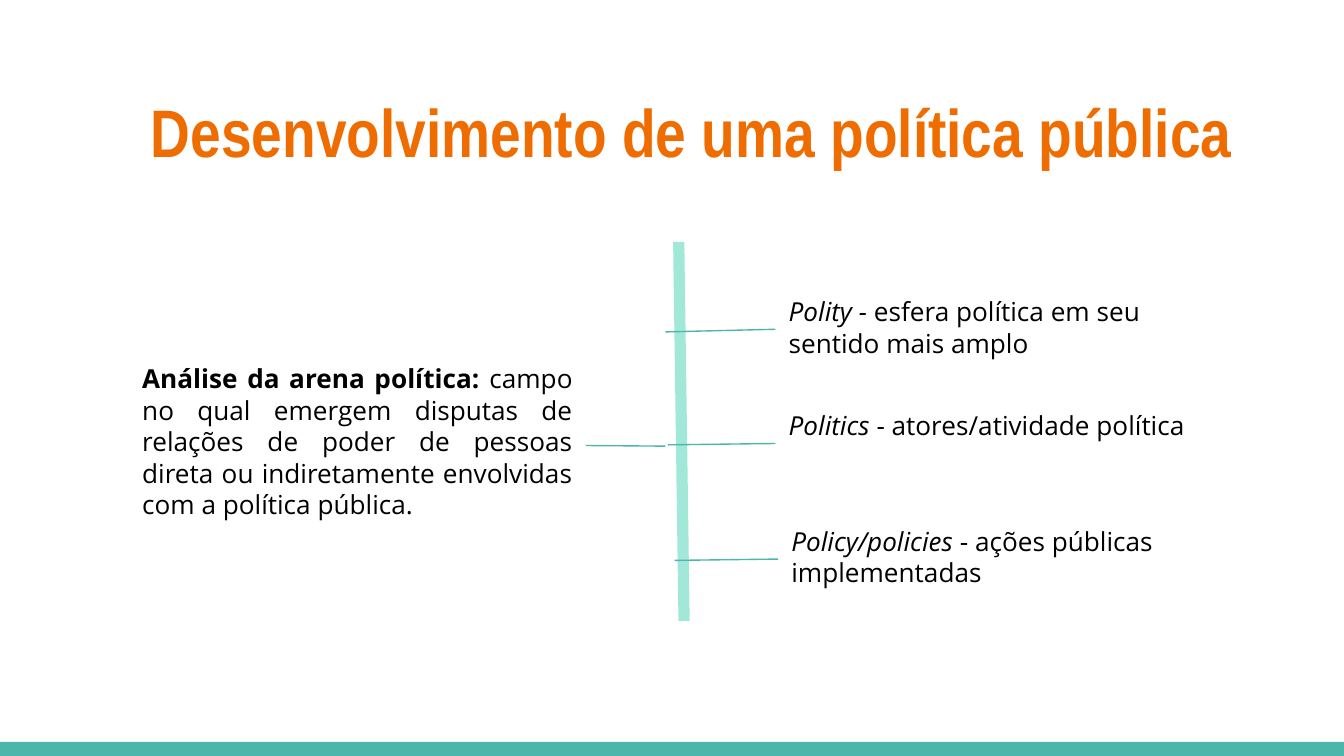
from dataclasses import dataclass

from lxml.etree import SubElement
from pptx import Presentation
from pptx.dml.color import RGBColor
from pptx.enum.shapes import MSO_CONNECTOR, MSO_SHAPE
from pptx.enum.text import MSO_ANCHOR, MSO_AUTO_SIZE, PP_ALIGN
from pptx.oxml.ns import qn
from pptx.util import Inches, Pt


@dataclass(frozen=True)
class Theme:
    teal: RGBColor = RGBColor.from_string("4DB6AC")
    mint: RGBColor = RGBColor.from_string("A1E8D9")
    orange: RGBColor = RGBColor.from_string("EF6C00")
    black: RGBColor = RGBColor.from_string("000000")
    head: Pt = Pt(36)
    text: Pt = Pt(14)


theme = Theme()
inset = Inches(0.1)
frame_format = {
    "word_wrap": True,
    "auto_size": MSO_AUTO_SIZE.NONE,
    "vertical_anchor": MSO_ANCHOR.TOP,
    "margin_left": inset,
    "margin_right": inset,
    "margin_top": inset,
    "margin_bottom": inset,
}
head_font = {"name": "Arial Narrow", "size": theme.head, "bold": True}
text_font = {"name": "Open Sans", "size": theme.text}


def fill_text(shape, para_format, color, runs):
    frame = shape.text_frame
    for key, value in frame_format.items():
        setattr(frame, key, value)
    para = frame.paragraphs[0]
    for key, value in para_format.items():
        setattr(para, key, value)
    for words, font in runs:
        run = para.add_run()
        run.text = words
        run.font.color.rgb = color
        for key, value in font.items():
            setattr(run.font, key, value)


def add_line(start, end, color, width):
    line = slide.shapes.add_connector(
        MSO_CONNECTOR.STRAIGHT, *[Inches(n) for n in (*start, *end)]
    )
    line.line.color.rgb = color
    line.line.width = Pt(width)
    SubElement(line._element.spPr, qn("a:effectLst"))
    return line


deck = Presentation()
deck.slide_width = Inches(10)
deck.slide_height = deck.slide_width * 9 // 16
slide = deck.slides.add_slide(deck.slide_layouts[5])

base = Inches(5.52)
bar = slide.shapes.add_shape(
    MSO_SHAPE.RECTANGLE, 0, base, deck.slide_width, deck.slide_height - base
)
bar.shadow.inherit = False
bar.fill.solid()
bar.fill.fore_color.rgb = theme.teal
bar.line.fill.background()

title = slide.shapes.title
place = {"left": 0.47, "top": 0.48, "width": 9.35, "height": 0.7}
for key, value in place.items():
    setattr(title, key, Inches(value))
fill_text(
    title,
    {"alignment": PP_ALIGN.CENTER, "line_spacing": 1.15, "space_after": Pt(16)},
    theme.orange,
    [("Desenvolvimento de uma política pública", head_font)],
)

notes = [
    (0.96, 2.6, 1.43, PP_ALIGN.JUSTIFY, "bold", "Análise da arena política:",
     " campo no qual emergem disputas de relações de poder de pessoas direta"
     " ou indiretamente envolvidas com a política pública."),
    (5.77, 2.1, 0.7, PP_ALIGN.LEFT, "italic", "Polity - ",
     "esfera política em seu sentido mais amplo"),
    (5.77, 2.95, 0.7, PP_ALIGN.LEFT, "italic", "Politics ",
     "- atores/atividade política"),
    (5.79, 3.81, 0.7, PP_ALIGN.LEFT, "italic", "Policy/policies ",
     "- ações públicas implementadas"),
]
boxes = []
for left, top, height, align, style, term, rest in notes:
    box = slide.shapes.add_textbox(
        Inches(left), Inches(top), Inches(3.4), Inches(height)
    )
    fill_text(
        box,
        {"alignment": align},
        theme.black,
        [(term, {**text_font, style: True}), (rest, text_font)],
    )
    boxes.append(box)

add_line((5.05, 1.8), (5.09, 4.62), theme.mint, 6)

arena, *terms = boxes
starts = [(4.95, 2.47), (4.97, 3.31), (5.02, 4.17), (4.95, 3.32)]
sides = [(box, 1) for box in terms] + [(arena, 3)]
for start, (box, side) in zip(starts, sides):
    branch = add_line(start, start, theme.teal, 0.75)
    branch.end_connect(box, side)

deck.save("out.pptx")
